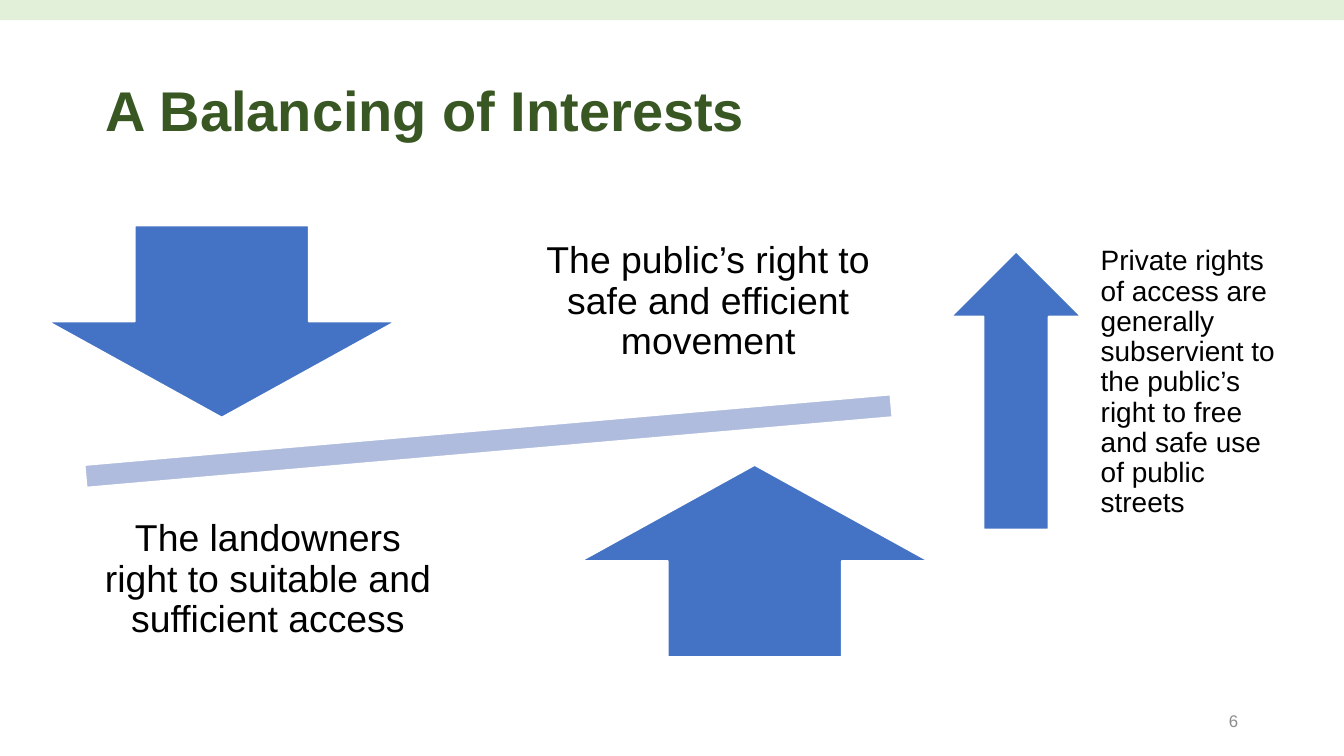
import pptx
import pptx.util
import pptx.dml.color
import pptx.enum.shapes
import pptx.enum.text

Inches, Pt = pptx.util.Inches, pptx.util.Pt
SHAPE = pptx.enum.shapes.MSO_SHAPE
ALIGN = pptx.enum.text.PP_ALIGN
MIDDLE = pptx.enum.text.MSO_ANCHOR.MIDDLE

WIDE = 10
HIGH = WIDE * 9 / 16
FONT = "Arial"
COLORS = {
    "band": "E2F0D9", "title": "385723", "arrow": "4472C4",
    "beam": "B0BCDE", "edge": "FFFFFF", "text": "000000", "page": "8C8C8C",
}

TITLE = "A Balancing of Interests"
PAGE = "6"
# Boxes are left, top, width and height in percent of the slide.
TITLE_BOX = (6.88, 5.33, 86.25, 19.38)
PAGE_BOX = (70.62, 92.68, 22.5, 5.33)

# kind, box, colour, turn in degrees
SHAPES = [
    (SHAPE.RECTANGLE, (0, 0, 100, 2.67), "band", 0),
    (SHAPE.MATH_MINUS, (-4.6, 51.95, 81.9, 12.8), "beam", -5),
    (SHAPE.DOWN_ARROW, (3.55, 29.82, 25.9, 25.42), "arrow", 0),
    (SHAPE.UP_ARROW, (43.2, 61.51, 25.9, 25.42), "arrow", 0),
    (SHAPE.UP_ARROW, (70.75, 33.27, 9.7, 36.8), "arrow", 0),
]

# text, box, size, alignment, insets in inches
PAD = (0.16, 0.16, 0.16, 0.16)
NOTES = [
    ("The public’s right to safe and efficient movement",
     (38.9, 26.62, 27.6, 26.67), 20, ALIGN.CENTER, PAD),
    ("The landowners right to suitable and sufficient access",
     (6.15, 63.4, 27.6, 26.67), 20, ALIGN.CENTER, PAD),
    ("Private rights of access are generally subservient to the public’s "
     "right to free and safe use of public streets",
     (80.7, 33.3, 16.4, 36.8), 15, ALIGN.LEFT, (0.12, 0, 0.12, 0.12)),
]


def rgb(name):
    return pptx.dml.color.RGBColor.from_string(COLORS[name])


def place(box):
    """Turn percents of the slide into lengths."""
    return [Inches(part * side / 100)
            for part, side in zip(box, (WIDE, HIGH) * 2)]


def write(shape, text, size, color="text", bold=False, align=ALIGN.LEFT,
          pad=(0.1, 0.05, 0.1, 0.05), lead=0.9):
    frame = shape.text_frame
    frame.word_wrap = True
    frame.auto_size = pptx.enum.text.MSO_AUTO_SIZE.NONE
    frame.vertical_anchor = MIDDLE
    (frame.margin_left, frame.margin_top,
     frame.margin_right, frame.margin_bottom) = map(Inches, pad)
    frame.text = text
    para = frame.paragraphs[0]
    para.alignment, para.line_spacing = align, lead
    font = para.runs[0].font
    font.name, font.size, font.bold = FONT, Pt(size), bold
    font.color.rgb = rgb(color)


def draw(slide, kind, box, color, turn):
    shape = slide.shapes.add_shape(kind, *place(box))
    shape.shadow.inherit = False
    shape.rotation = turn
    shape.fill.solid()
    shape.fill.fore_color.rgb = rgb(color)
    if color == "band":
        shape.line.fill.background()
    else:
        shape.line.color.rgb = rgb("edge")
        shape.line.width = Pt(1)


def main():
    deck = pptx.Presentation()
    deck.slide_width, deck.slide_height = Inches(WIDE), Inches(HIGH)
    slide = deck.slides.add_slide(deck.slide_layouts[5])
    title = slide.shapes.title
    title.left, title.top, title.width, title.height = place(TITLE_BOX)
    write(title, TITLE, 30, color="title", bold=True)
    for item in SHAPES:
        draw(slide, *item)
    for text, box, size, align, pad in NOTES:
        note = slide.shapes.add_textbox(*place(box))
        write(note, text, size, align=align, pad=pad)
    page = slide.shapes.add_textbox(*place(PAGE_BOX))
    write(page, PAGE, 9, color="page", align=ALIGN.RIGHT, lead=1.0)
    deck.save("out.pptx")


if __name__ == "__main__":
    main()
